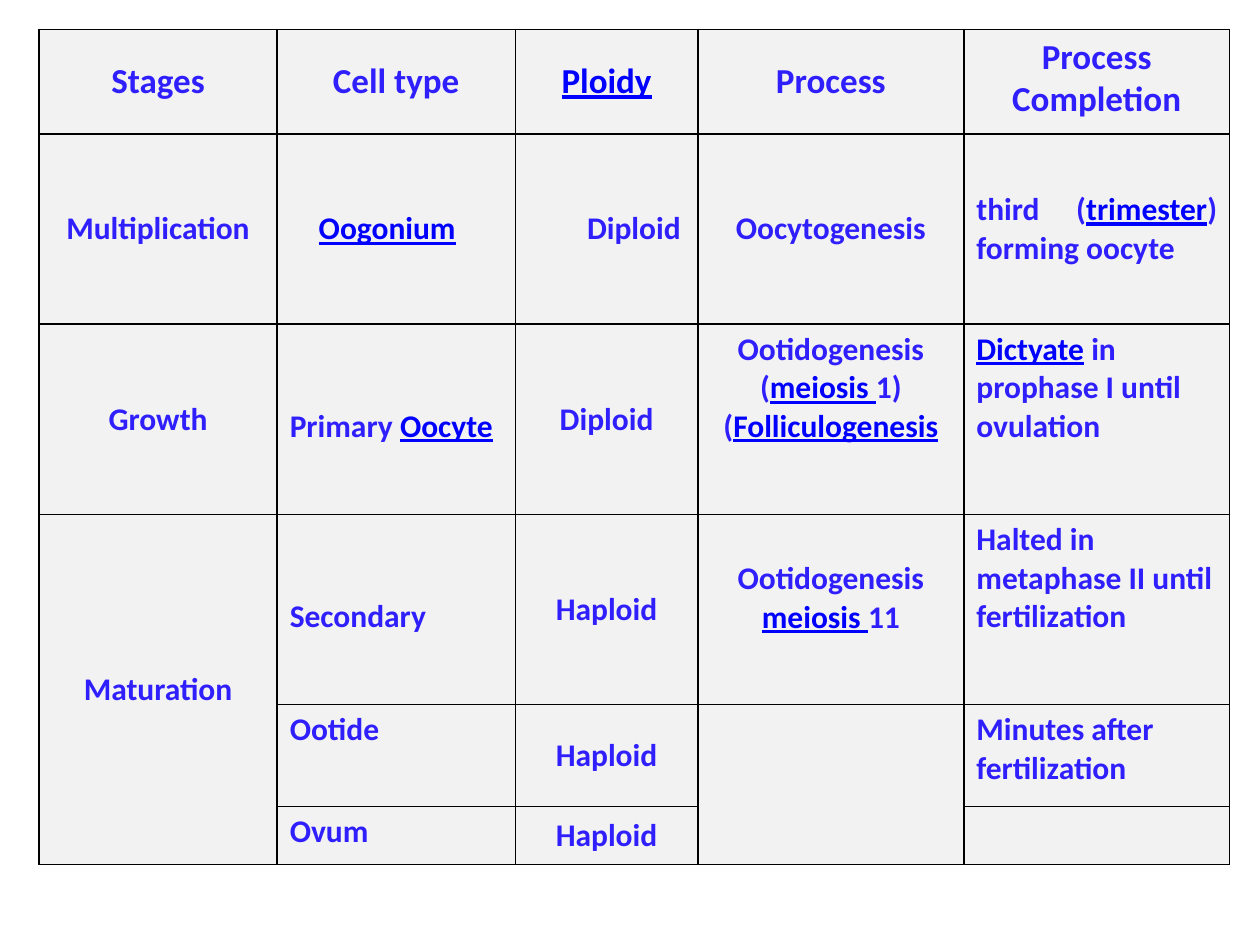
from lxml.etree import SubElement as Sub
from pptx import Presentation
from pptx.dml.color import RGBColor
from pptx.enum.text import MSO_ANCHOR as Anchor, PP_ALIGN as Align
from pptx.oxml.ns import qn
from pptx.util import Inches, Pt

WIDE, HIGH = 10, 7.5
COLS = [1.89, 1.89, 1.45, 2.11, 2.11]
ROWS = [0.83, 1.51, 1.51, 1.51, 0.81, 0.46]
TEXT = [
    ["Stages", "Cell type", "_Ploidy_", "Process", "Process Completion"],
    ["Multiplication", "_Oogonium_", "Diploid", "Oocytogenesis",
     "third (_trimester_) forming oocyte"],
    ["Growth", "Primary _Oocyte_", "Diploid",
     "Ootidogenesis\n(_meiosis _1) (_Folliculogenesis_",
     "_Dictyate_ in prophase I until ovulation"],
    ["Maturation", "Secondary", "Haploid", "Ootidogenesis\n_meiosis _11",
     "Halted in metaphase II until fertilization"],
    ["", "Ootide", "Haploid", "", "Minutes after fertilization"],
    ["", "Ovum", "Haploid", "", ""],
]
SPANS = [((3, 0), (5, 0)), ((4, 3), (5, 3))]
LEFTS = {(1, 1): 0.33, (1, 2): 0.57}
TOPS = {(2, 1): 0.66, (3, 1): 0.66, (3, 3): 0.36}


def hue(code):
    return RGBColor.from_string(code)


class Deck:
    """Holds the style and the current slide."""
    font, ink, link, back, edge = "Calibri", "2F1FFD", "0000FF", "F2F2F2", "000000"

    def __init__(self):
        self.show = Presentation()
        self.show.slide_width, self.show.slide_height = Inches(WIDE), Inches(HIGH)
        self.slide = self.show.slides.add_slide(self.show.slide_layouts[6])

    def table(self, x, y):
        frame = self.slide.shapes.add_table(
            len(ROWS), len(COLS), Inches(x * WIDE), Inches(y * HIGH),
            Inches(sum(COLS)), Inches(sum(ROWS)))
        grid = frame.table
        grid.first_row = grid.horz_banding = False
        for col, size in zip(grid.columns, COLS):
            col.width = Inches(size)
        for row, size in zip(grid.rows, ROWS):
            row.height = Inches(size)
        for r, line in enumerate(TEXT):
            for c, text in enumerate(line):
                self.cell(grid.cell(r, c), r, c, text)
        for start, end in SPANS:
            grid.cell(*start).merge(grid.cell(*end))

    def cell(self, cell, r, c, text):
        self.border(cell)
        cell.fill.solid()
        cell.fill.fore_color.rgb = hue(self.back)
        tight = c in (0, 2)
        if tight:
            cell.margin_left = cell.margin_right = Inches(0.01)
            cell.margin_top = cell.margin_bottom = Inches(0.01)
        if (r, c) in LEFTS:
            cell.margin_left = Inches(LEFTS[r, c])
        if (r, c) in TOPS:
            cell.margin_top = Inches(TOPS[r, c])
        middle = tight or r == 1 or (r == 0 and c < 4)
        cell.vertical_anchor = Anchor.MIDDLE if middle else Anchor.TOP
        if not text:
            return
        if r and (c == 1 or (r == 1 and c in (2, 4))):
            align = Align.JUSTIFY
        else:
            align = Align.LEFT if r and c == 4 else Align.CENTER
        cell.text_frame.text = text.replace("_", "")
        for para, part in zip(cell.text_frame.paragraphs, text.split("\n")):
            para.alignment = align
            self.runs(para, part, 18 if r else 20)

    def runs(self, para, text, size):
        para.clear()
        for i, part in enumerate(text.split("_")):
            if part:
                run = para.add_run()
                run.text = part
                font = run.font
                font.name, font.size, font.bold = self.font, Pt(size), True
                font.underline = i % 2 == 1
                font.color.rgb = hue(self.link if i % 2 else self.ink)

    def border(self, cell):
        props = cell._tc.get_or_add_tcPr()
        for side in ("lnL", "lnR", "lnT", "lnB"):
            line = Sub(props, qn("a:" + side), w=str(Pt(1)))
            fill = Sub(line, qn("a:solidFill"))
            Sub(fill, qn("a:srgbClr"), val=self.edge)


def main():
    deck = Deck()
    deck.table(0.031, 0.031)
    deck.show.save("out.pptx")


if __name__ == "__main__":
    main()
